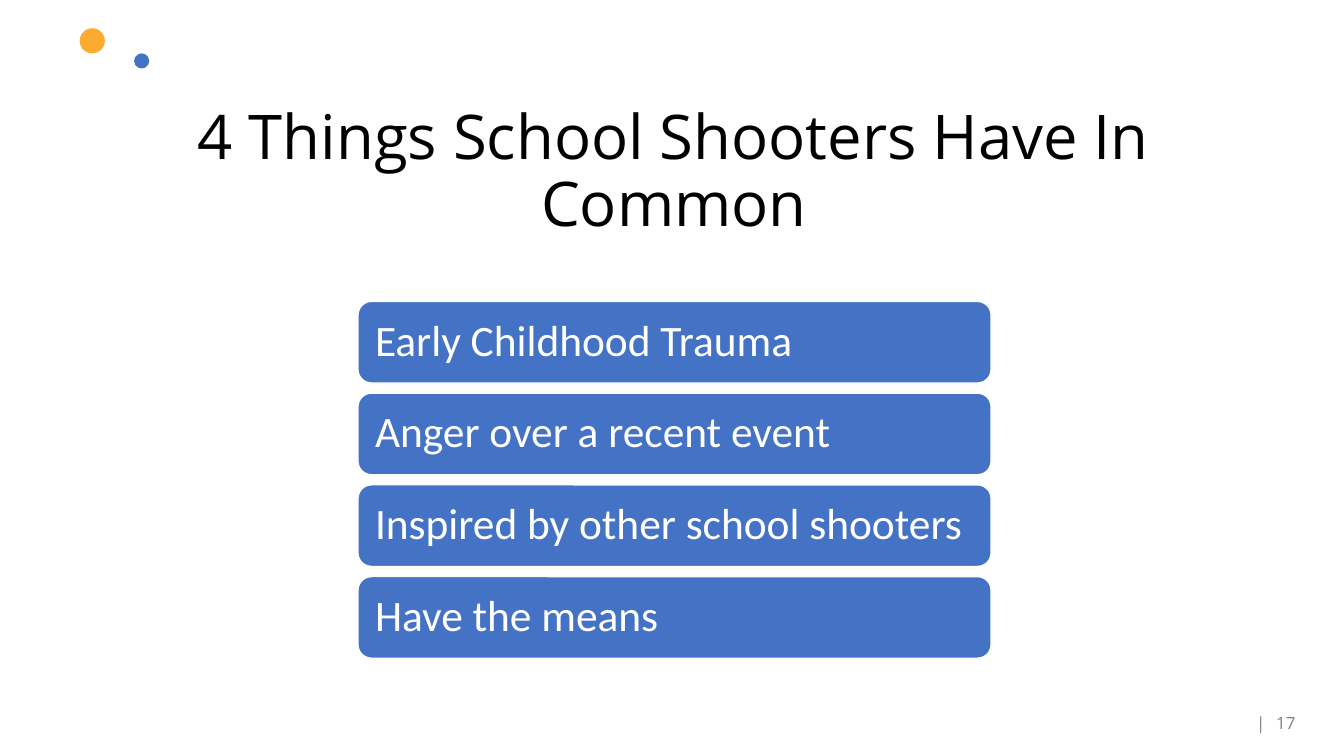
from lxml.etree import SubElement
from pptx import Presentation
from pptx.dml.color import RGBColor
from pptx.enum.shapes import MSO_SHAPE
from pptx.enum.text import MSO_ANCHOR, MSO_AUTO_SIZE, PP_ALIGN
from pptx.oxml.ns import qn
from pptx.util import Inches, Pt

BLUE, ORANGE, WHITE, BLACK, GRAY = "4472C4", "FBAB30", "FFFFFF", "000000", "808080"
TRAITS = [
    "Early Childhood Trauma",
    "Anger over a recent event",
    "Inspired by other school shooters",
    "Have the means",
]
CARD_TOP, CARD_PITCH = 2.99, 0.91


def color(hex_code):
    return RGBColor.from_string(hex_code)


def style_font(paragraph, name, size, hex_code):
    for run in paragraph.runs:
        run.font.name = name
        run.font.size = Pt(size)
        run.font.color.rgb = color(hex_code)


def add_filled(slide, preset, left, top, width, height, fill):
    shape = slide.shapes.add_shape(
        preset, Inches(left), Inches(top), Inches(width), Inches(height))
    shape.shadow.inherit = False
    shape.fill.solid()
    shape.fill.fore_color.rgb = color(fill)
    return shape


def add_dot(slide, left, top, diameter, fill):
    dot = add_filled(slide, MSO_SHAPE.OVAL, left, top, diameter, diameter, fill)
    dot.line.fill.background()


def add_title(slide, wording):
    title = slide.shapes.title
    title.left, title.top = Inches(1.07), Inches(0.99)
    title.width, title.height = Inches(11.23), Inches(1.45)
    frame = title.text_frame
    frame.text = wording
    frame.word_wrap = True
    frame.auto_size = MSO_AUTO_SIZE.NONE
    frame.vertical_anchor = MSO_ANCHOR.MIDDLE
    heading = frame.paragraphs[0]
    heading.alignment = PP_ALIGN.CENTER
    heading.line_spacing = 0.9
    style_font(heading, "Open Sans", 44, BLACK)


def add_card(slide, top, wording):
    card = add_filled(slide, MSO_SHAPE.ROUNDED_RECTANGLE, 3.55, top, 6.28, 0.81, BLUE)
    card.line.color.rgb = color(WHITE)
    card.line.width = Pt(1)
    frame = card.text_frame
    frame.text = wording
    frame.word_wrap = True
    frame.vertical_anchor = MSO_ANCHOR.MIDDLE
    frame.margin_left = frame.margin_right = Inches(0.13)
    frame.margin_top = frame.margin_bottom = Inches(0.13)
    trait = frame.paragraphs[0]
    trait.alignment = PP_ALIGN.LEFT
    trait.line_spacing = 0.9
    style_font(trait, "Calibri", 31, WHITE)


def add_page_number(slide, number):
    footer = slide.shapes.add_textbox(
        Inches(12.36), Inches(6.97), Inches(0.6), Inches(0.4))
    frame = footer.text_frame
    frame.text = f"|\t{number}"
    frame.word_wrap = True
    frame.vertical_anchor = MSO_ANCHOR.MIDDLE
    page = frame.paragraphs[0]
    page.alignment = PP_ALIGN.LEFT
    tab_list = SubElement(page._p.get_or_add_pPr(), qn("a:tabLst"))
    SubElement(tab_list, qn("a:tab"), pos=str(Inches(0.2)), algn="l")
    style_font(page, "Open Sans", 12, GRAY)


def main():
    deck = Presentation()
    deck.slide_width, deck.slide_height = Inches(13.33), Inches(7.5)
    slide = deck.slides.add_slide(deck.slide_layouts[5])
    add_page_number(slide, 17)
    add_dot(slide, 1.33, 0.53, 0.15, BLUE)
    add_dot(slide, 0.79, 0.28, 0.25, ORANGE)
    add_title(slide, "4 Things School Shooters Have In Common")
    for row, trait in enumerate(TRAITS):
        add_card(slide, CARD_TOP + row * CARD_PITCH, trait)
    deck.save("out.pptx")


if __name__ == "__main__":
    main()
